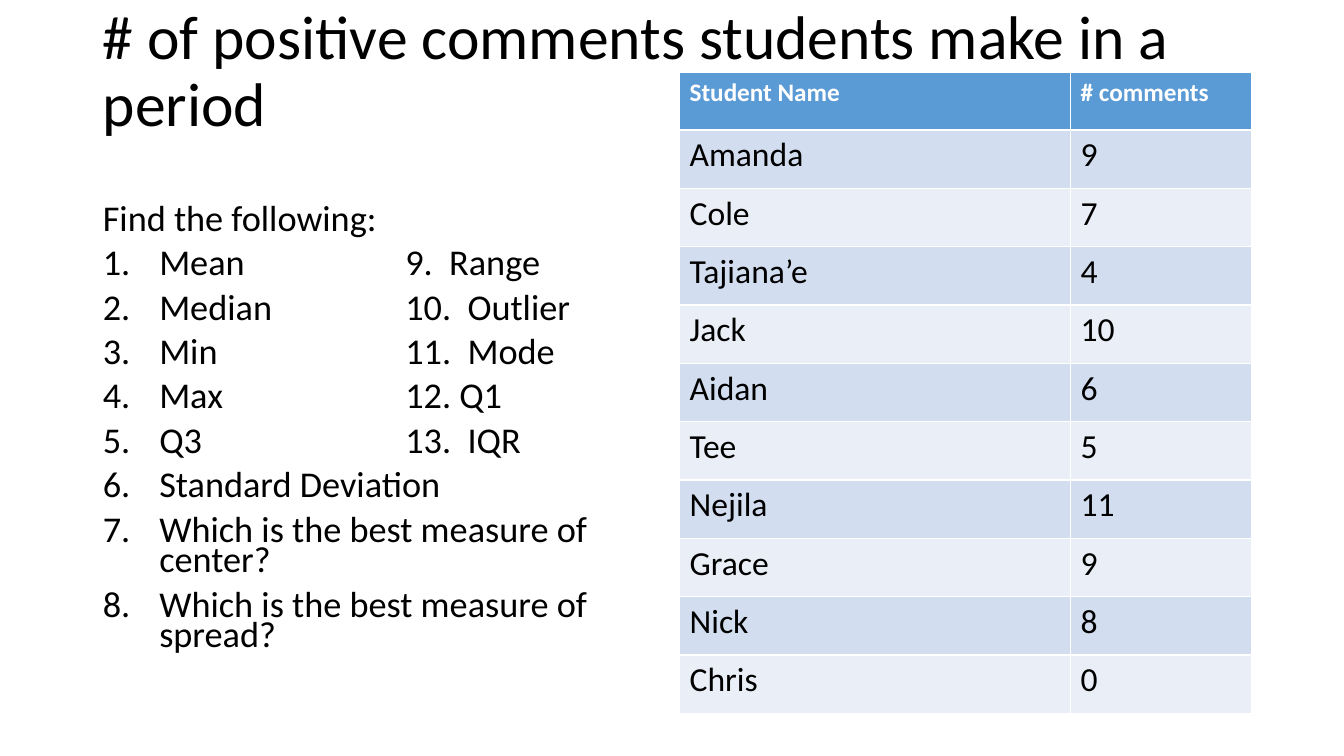
from pptx import Presentation
from pptx.dml.color import RGBColor
from pptx.enum.text import MSO_ANCHOR, MSO_AUTO_SIZE, PP_ALIGN
from pptx.oxml.xmlchemy import OxmlElement
from pptx.util import Inches, Pt

LEFT = PP_ALIGN.LEFT
MIDDLE, TOP = MSO_ANCHOR.MIDDLE, MSO_ANCHOR.TOP
NO_AUTOFIT = MSO_AUTO_SIZE.NONE
TITLE_AND_CONTENT = 1

TITLE = "# of positive comments students make in a period"
INTRO = "Find the following:"
TASKS = [
    "Mean\t9.  Range", "Median\t10.  Outlier", "Min\t11.  Mode",
    "Max\t12. Q1", "Q3\t13.  IQR", "Standard Deviation",
    "Which is the best measure of center?",
    "Which is the best measure of spread?",
]
HEADINGS = ("Student Name", "# comments")
COMMENTS = [
    ("Amanda", 9), ("Cole", 7), ("Tajiana’e", 4), ("Jack", 10), ("Aidan", 6),
    ("Tee", 5), ("Nejila", 11), ("Grace", 9), ("Nick", 8), ("Chris", 0),
]


def color(hex_code):
    return RGBColor.from_string(hex_code)


class CommentsSlide:
    font = "Calibri"
    ink, paper = "000000", "FFFFFF"
    header_fill, bands = "5B9BD5", ("D2DEEF", "EAEFF7")
    hanging, second_column = Inches(0.56), Inches(3)

    def __init__(self, deck):
        self.width, self.height = deck.slide_width, deck.slide_height
        self.page = deck.slides.add_slide(deck.slide_layouts[TITLE_AND_CONTENT])

    def across(self, percent):
        return round(self.width * percent / 100)

    def down(self, percent):
        return round(self.height * percent / 100)

    def place(self, box, left, top, width, height, anchor):
        """Set a placeholder's frame in percent of the slide."""
        box.left, box.top = self.across(left), self.down(top)
        box.width, box.height = self.across(width), self.down(height)
        frame = box.text_frame
        frame.word_wrap, frame.auto_size = True, NO_AUTOFIT
        frame.vertical_anchor = anchor
        return frame

    def style(self, para, size, ink=ink, bold=False):
        para.alignment = LEFT
        para.font.name, para.font.size = self.font, Pt(size)
        para.font.bold, para.font.color.rgb = bold, color(ink)

    def title(self, text, *area):
        frame = self.place(self.page.shapes.title, *area, MIDDLE)
        frame.text = text
        para = frame.paragraphs[0]
        self.style(para, 44)
        para.line_spacing = 0.9

    def number(self, para):
        """Give a paragraph a number, a hanging indent and a tab stop."""
        props = para._p.get_or_add_pPr()
        props.set("marL", str(self.hanging))
        props.set("indent", str(-self.hanging))
        bullet = OxmlElement("a:buAutoNum")
        bullet.set("type", "arabicPeriod")
        stops = OxmlElement("a:tabLst")
        stop = OxmlElement("a:tab")
        stop.set("pos", str(self.second_column))
        stop.set("algn", "l")
        stops.append(stop)
        for part in (bullet, stops):
            props.insert_element_before(part, "a:defRPr")

    def unindent(self, para):
        props = para._p.get_or_add_pPr()
        props.set("marL", "0")
        props.set("indent", "0")
        props.insert_element_before(OxmlElement("a:buNone"), "a:defRPr")

    def numbered_list(self, intro, items, *area):
        frame = self.place(self.page.placeholders[1], *area, TOP)
        frame.margin_right = Inches(0.2)
        frame.text = "\n".join([intro, *items])
        for index, para in enumerate(frame.paragraphs):
            self.style(para, 25.9)
            para.line_spacing, para.space_before = 0.7, Pt(10)
            if index:
                self.number(para)
            else:
                self.unindent(para)

    def table(self, headings, records, left, top, widths, header_row, body_row):
        rows = [headings, *records]
        heights = [header_row] + [body_row] * len(records)
        table = self.page.shapes.add_table(
            len(rows), len(headings), self.across(left), self.down(top),
            self.across(sum(widths)), self.down(sum(heights))).table
        for column, width in zip(table.columns, widths):
            column.width = self.across(width)
        for index, (row, height) in enumerate(zip(table.rows, heights)):
            row.height = self.down(height)
            fill = self.bands[(index - 1) % 2] if index else self.header_fill
            for cell, value in zip(row.cells, rows[index]):
                cell.text = str(value)
                cell.fill.solid()
                cell.fill.fore_color.rgb = color(fill)
                para = cell.text_frame.paragraphs[0]
                if index:
                    self.style(para, 24)
                else:
                    self.style(para, 18, self.paper, bold=True)


def main():
    deck = Presentation()
    deck.slide_width, deck.slide_height = Inches(13.33), Inches(7.5)
    slide = CommentsSlide(deck)

    # Heading and questions
    slide.title(TITLE, 6.9, 0, 86.25, 19.33)
    slide.numbered_list(INTRO, TASKS, 6.9, 26.67, 46.29, 63.47)

    # Comment counts
    slide.table(HEADINGS, COMMENTS, 50.56, 9.6, (29.1, 13.5), 7.6, 7.72)

    deck.save("out.pptx")


if __name__ == "__main__":
    main()
